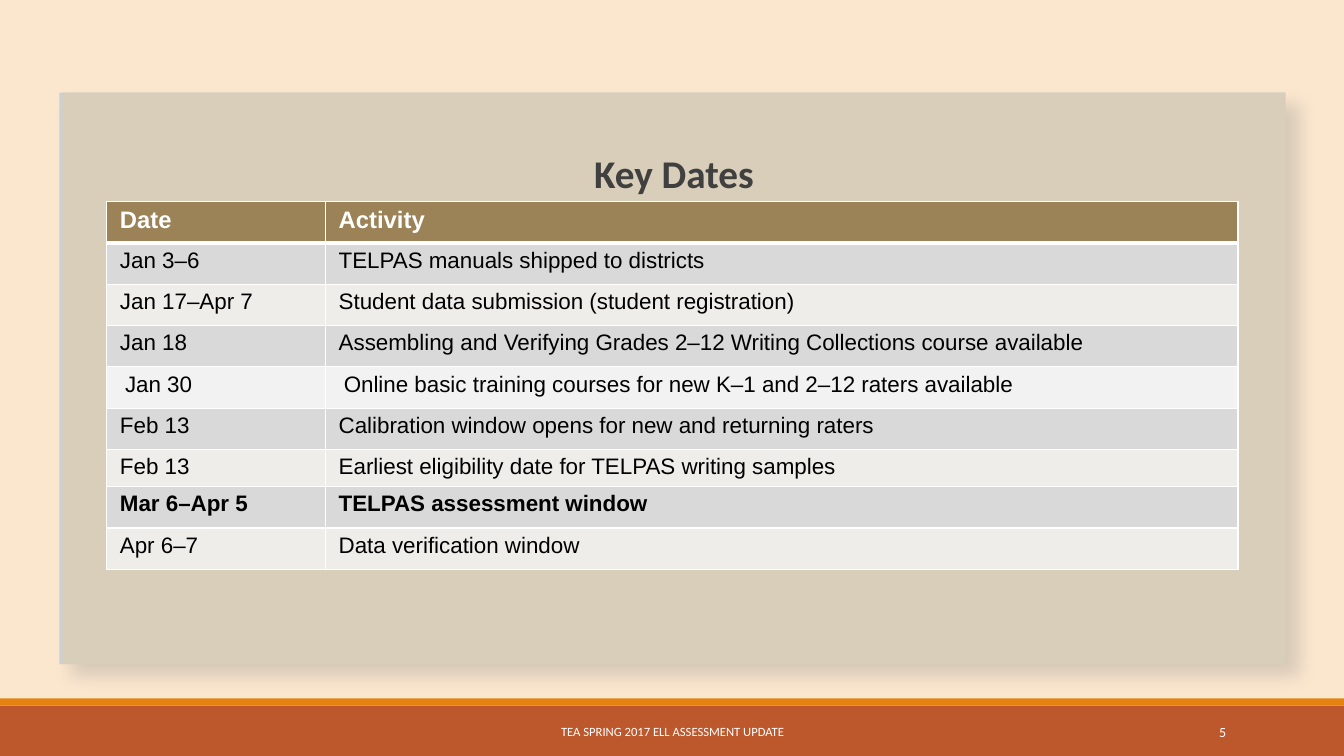
from lxml.etree import SubElement
from pptx import Presentation
from pptx.dml.color import RGBColor
from pptx.enum.shapes import MSO_SHAPE
from pptx.enum.text import MSO_ANCHOR as ANCHOR, PP_ALIGN as ALIGN
from pptx.oxml.ns import qn
from pptx.util import Inches, Pt

WIDTH, HEIGHT = 13.33, 7.5
WHITE = "FFFFFF"
BAND_TOP, STRIPE_HEIGHT = 7, 0.07
HEADER_FILL, ODD_FILL, EVEN_FILL, PALE_FILL = "9B8357", "D9D9D9", "EFEDEA", "F2F2F2"
PALE_ROW, SHORT_ROW, BOLD_ROW = 4, 6, 7
COLUMN_WIDTHS = 2.17, 9.05
ROW_HEIGHT, SHORT_HEIGHT = 0.41, 0.37
KEY_DATES = [
    ("Date", "Activity"),
    ("Jan 3–6", "TELPAS manuals shipped to districts"),
    ("Jan 17–Apr 7", "Student data submission (student registration)"),
    ("Jan 18", "Assembling and Verifying Grades 2–12 Writing Collections course available"),
    ("Jan 30", "Online basic training courses for new K–1 and 2–12 raters available"),
    ("Feb 13", "Calibration window opens for new and returning raters"),
    ("Feb 13", "Earliest eligibility date for TELPAS writing samples"),
    ("Mar 6–Apr 5", "TELPAS assessment window"),
    ("Apr 6–7", "Data verification window"),
]


def rgb(color):
    return RGBColor.from_string(color)


def write(frame, text, color, align=ALIGN.LEFT, **font_format):
    frame.text = text
    paragraph = frame.paragraphs[0]
    paragraph.alignment = align
    font = paragraph.runs[0].font
    font.color.rgb = rgb(color)
    for name, value in font_format.items():
        setattr(font, name, value)


def add_rectangle(slide, box, color):
    shape = slide.shapes.add_shape(MSO_SHAPE.RECTANGLE, *map(Inches, box))
    shape.shadow.inherit = False
    shape.fill.solid()
    shape.fill.fore_color.rgb = rgb(color)
    shape.line.fill.background()
    return shape


def add_label(slide, box, text, align, size):
    frame = slide.shapes.add_textbox(*map(Inches, box)).text_frame
    frame.word_wrap = True
    frame.vertical_anchor = ANCHOR.MIDDLE
    write(frame, text, WHITE, align, size=Pt(size), name="Calibri")


def add_soft_shadow(shape):
    effects = shape.element.spPr.find(qn("a:effectLst"))
    shadow = SubElement(effects, qn("a:outerShdw"), blurRad=str(Pt(12)),
                        dist=str(Pt(13)), dir=str(45 * 60000), algn="tl", rotWithShape="0")
    color = SubElement(shadow, qn("a:srgbClr"), val="808080")
    SubElement(color, qn("a:alpha"), val="27000")


def add_footer(slide, top):
    add_rectangle(slide, (0, top, WIDTH, HEIGHT - top), "BD582C")
    add_rectangle(slide, (0, top - STRIPE_HEIGHT, WIDTH, STRIPE_HEIGHT), "E48312")
    label_top = top + 0.06
    add_label(slide, (10.83, label_top, 1.43, 0.4), "5", ALIGN.RIGHT, 10)
    add_label(slide, (4.03, label_top, 5.28, 0.4),
              "TEA SPRING 2017 ELL ASSESSMENT UPDATE", ALIGN.CENTER, 9)


def add_panel(slide, left, top, width, height):
    edge = 0.03
    add_soft_shadow(add_rectangle(slide, (left - edge, top, width + edge, height), "CBD0D4"))
    add_rectangle(slide, (left, top, width, height), "D8CEBA")

    title = slide.shapes.title
    title.element.getparent().append(title.element)  # bring in front of the panel
    title.left, title.top = Inches(left), Inches(top + 0.5)
    title.width, title.height = Inches(width), Inches(0.58)
    title.text_frame.vertical_anchor = ANCHOR.MIDDLE
    write(title.text_frame, "Key Dates", "404040", ALIGN.CENTER,
          size=Pt(28), name="Calibri", bold=True)

    add_dates_table(slide, left + 0.44, top + 1.08)


def add_border(cell, side, points):
    line = SubElement(cell._tc.get_or_add_tcPr(), qn(f"a:ln{side}"), w=str(Pt(points)))
    fill = SubElement(line, qn("a:solidFill"))
    SubElement(fill, qn("a:srgbClr"), val=WHITE)


def row_fill(row):
    if row == 0:
        return HEADER_FILL
    if row == PALE_ROW:
        return PALE_FILL
    return ODD_FILL if row % 2 else EVEN_FILL


def format_cell(cell, row, text):
    header = row == 0
    inset = 0.18 if row == PALE_ROW else 0.13
    cell.margin_left = cell.margin_right = Inches(inset)
    cell.margin_top = cell.margin_bottom = Inches(0.05)
    for side in "LRTB":
        thick = (row, side) in ((0, "B"), (1, "T"))
        add_border(cell, side, 3 if thick else 1)
    cell.fill.solid()
    cell.fill.fore_color.rgb = rgb(row_fill(row))
    write(cell.text_frame, text, WHITE if header else "000000",
          size=Pt(17 if header else 16), name="Arial", bold=row in (0, BOLD_ROW))


def add_dates_table(slide, left, top):
    heights = [SHORT_HEIGHT if row == SHORT_ROW else ROW_HEIGHT
               for row in range(len(KEY_DATES))]
    box = left, top, sum(COLUMN_WIDTHS), sum(heights)
    table = slide.shapes.add_table(len(heights), len(COLUMN_WIDTHS), *map(Inches, box)).table
    table.horz_banding = False
    for column, width in zip(table.columns, COLUMN_WIDTHS):
        column.width = Inches(width)
    for row, (height, texts) in enumerate(zip(heights, KEY_DATES)):
        table.rows[row].height = Inches(height)
        for column, text in enumerate(texts):
            format_cell(table.cell(row, column), row, text)


def main():
    presentation = Presentation()
    presentation.slide_width, presentation.slide_height = Inches(WIDTH), Inches(HEIGHT)
    slide = presentation.slides.add_slide(presentation.slide_layouts.get_by_name("Title Only"))
    slide.background.fill.solid()
    slide.background.fill.fore_color.rgb = rgb("FBE6CE")
    add_footer(slide, BAND_TOP)
    add_panel(slide, 0.62, 0.92, 12.13, 5.67)
    presentation.save("out.pptx")


if __name__ == "__main__":
    main()
